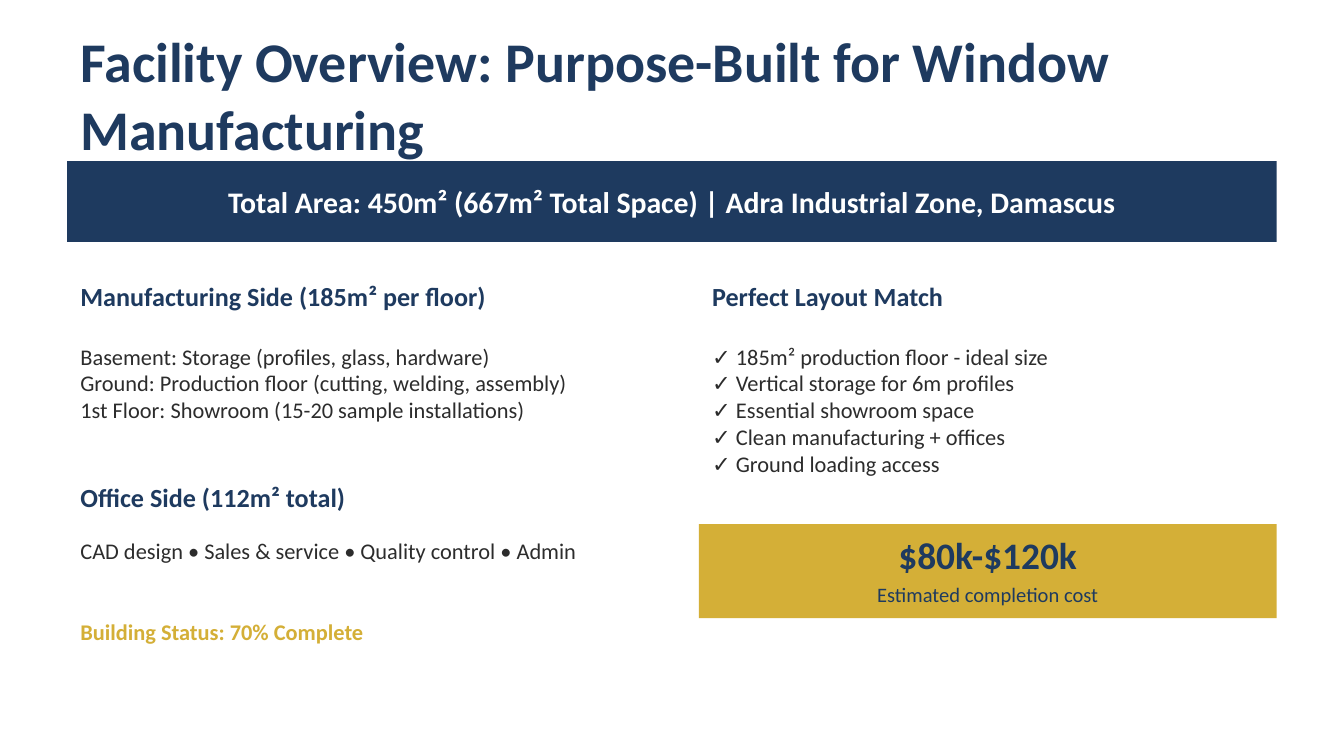
from dataclasses import dataclass

from pptx import Presentation
from pptx import util as u
from pptx.dml.color import RGBColor
from pptx.enum import shapes, text


@dataclass(frozen=True)
class Theme:
    font: str = "Calibri"
    navy: str = "1E3A5F"
    gold: str = "D4AF37"
    ink: str = "2C2C2C"
    white: str = "FFFFFF"
    title: int = 30
    figure: int = 20
    banner: int = 16
    heading: int = 14
    body: int = 12
    caption: int = 11


class SlideBuilder:
    def __init__(self, slide, theme):
        self.slide = slide
        self.theme = theme

    def label(self, box, lines, size, color, bold=False, centered=False):
        """Add a vertically centred text box with one paragraph per line."""
        shape = self.slide.shapes.add_textbox(*map(u.Pt, box))
        frame = shape.text_frame
        frame.word_wrap = True
        frame.vertical_anchor = text.MSO_ANCHOR.MIDDLE
        frame.text = "\n".join(lines)
        for paragraph in frame.paragraphs:
            paragraph.alignment = text.PP_ALIGN.CENTER if centered else text.PP_ALIGN.LEFT
            font = paragraph.font
            font.name = self.theme.font
            font.size = u.Pt(size)
            font.bold = bold
            font.color.rgb = RGBColor.from_string(color)

    def panel(self, box, color):
        shape = self.slide.shapes.add_shape(
            shapes.MSO_SHAPE.RECTANGLE, *map(u.Pt, box))
        shape.shadow.inherit = False
        shape.fill.solid()
        shape.fill.fore_color.rgb = RGBColor.from_string(color)
        shape.line.fill.background()

    def section(self, left, top, width, body_height, heading, lines):
        """Add a heading with its body text directly below."""
        theme = self.theme
        self.label((left, top, width, HEADING_HEIGHT), [heading],
                   theme.heading, theme.navy, bold=True)
        self.label((left, top + HEADING_HEIGHT, width, body_height), lines,
                   theme.body, theme.ink)


SLIDE_WIDTH, SLIDE_HEIGHT = 720, 405
MARGIN = 36
GUTTER = 28.8
HEADING_HEIGHT = 28.8
FULL_WIDTH = SLIDE_WIDTH - 2 * MARGIN
COLUMN_WIDTH = (FULL_WIDTH - GUTTER) / 2
RIGHT = MARGIN + COLUMN_WIDTH + GUTTER

# left, top, body height, heading, lines
SECTIONS = [
    (MARGIN, 144, 64.8, "Manufacturing Side (185m² per floor)", [
        "Basement: Storage (profiles, glass, hardware)",
        "Ground: Production floor (cutting, welding, assembly)",
        "1st Floor: Showroom (15-20 sample installations)",
    ]),
    (MARGIN, 252, 28.8, "Office Side (112m² total)", [
        "CAD design • Sales & service • Quality control • Admin",
    ]),
    (RIGHT, 144, 93.6, "Perfect Layout Match", [
        "✓ 185m² production floor - ideal size",
        "✓ Vertical storage for 6m profiles",
        "✓ Essential showroom space",
        "✓ Clean manufacturing + offices",
        "✓ Ground loading access",
    ]),
]


def main():
    presentation = Presentation()
    presentation.slide_width = u.Pt(SLIDE_WIDTH)
    presentation.slide_height = u.Pt(SLIDE_HEIGHT)
    theme = Theme()
    slide = presentation.slides.add_slide(presentation.slide_layouts[6])
    builder = SlideBuilder(slide, theme)

    builder.label((MARGIN, 28.8, FULL_WIDTH, 43.2),
                  ["Facility Overview: Purpose-Built for Window Manufacturing"],
                  theme.title, theme.navy, bold=True)

    banner = (MARGIN, 86.4, FULL_WIDTH, 43.2)
    builder.panel(banner, theme.navy)
    builder.label(banner,
                  ["Total Area: 450m² (667m² Total Space) | Adra Industrial Zone, Damascus"],
                  theme.banner, theme.white, bold=True, centered=True)

    for left, top, body_height, heading, lines in SECTIONS:
        builder.section(left, top, COLUMN_WIDTH, body_height, heading, lines)

    builder.panel((RIGHT, 280.8, COLUMN_WIDTH, 50.4), theme.gold)
    builder.label((RIGHT, 284.4, COLUMN_WIDTH, 25.2), ["$80k-$120k"],
                  theme.figure, theme.navy, bold=True, centered=True)
    builder.label((RIGHT, 309.6, COLUMN_WIDTH, 18), ["Estimated completion cost"],
                  theme.caption, theme.navy, centered=True)

    builder.label((MARGIN, 324, COLUMN_WIDTH, 28.8), ["Building Status: 70% Complete"],
                  theme.body, theme.gold, bold=True)

    presentation.save("out.pptx")


if __name__ == "__main__":
    main()
